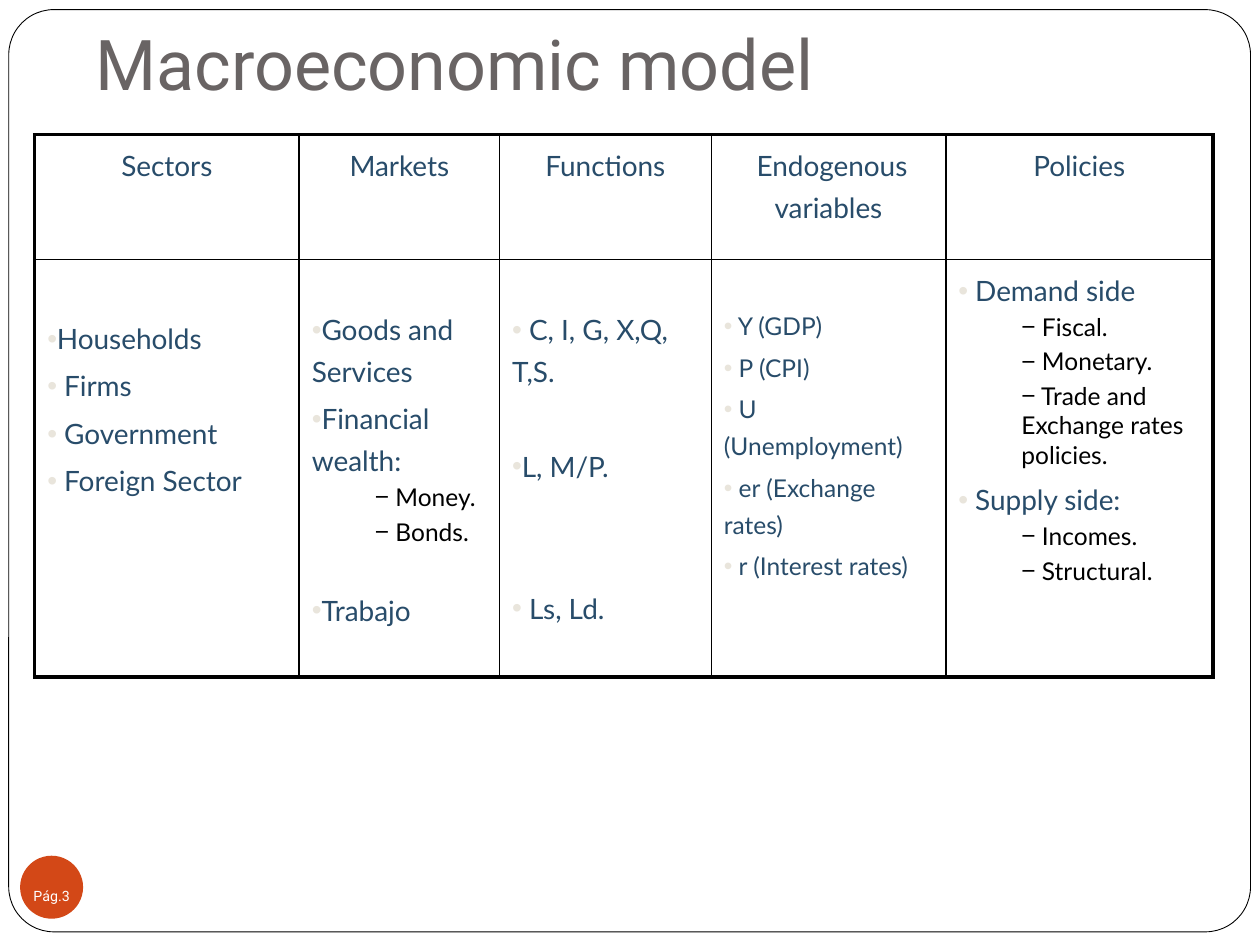
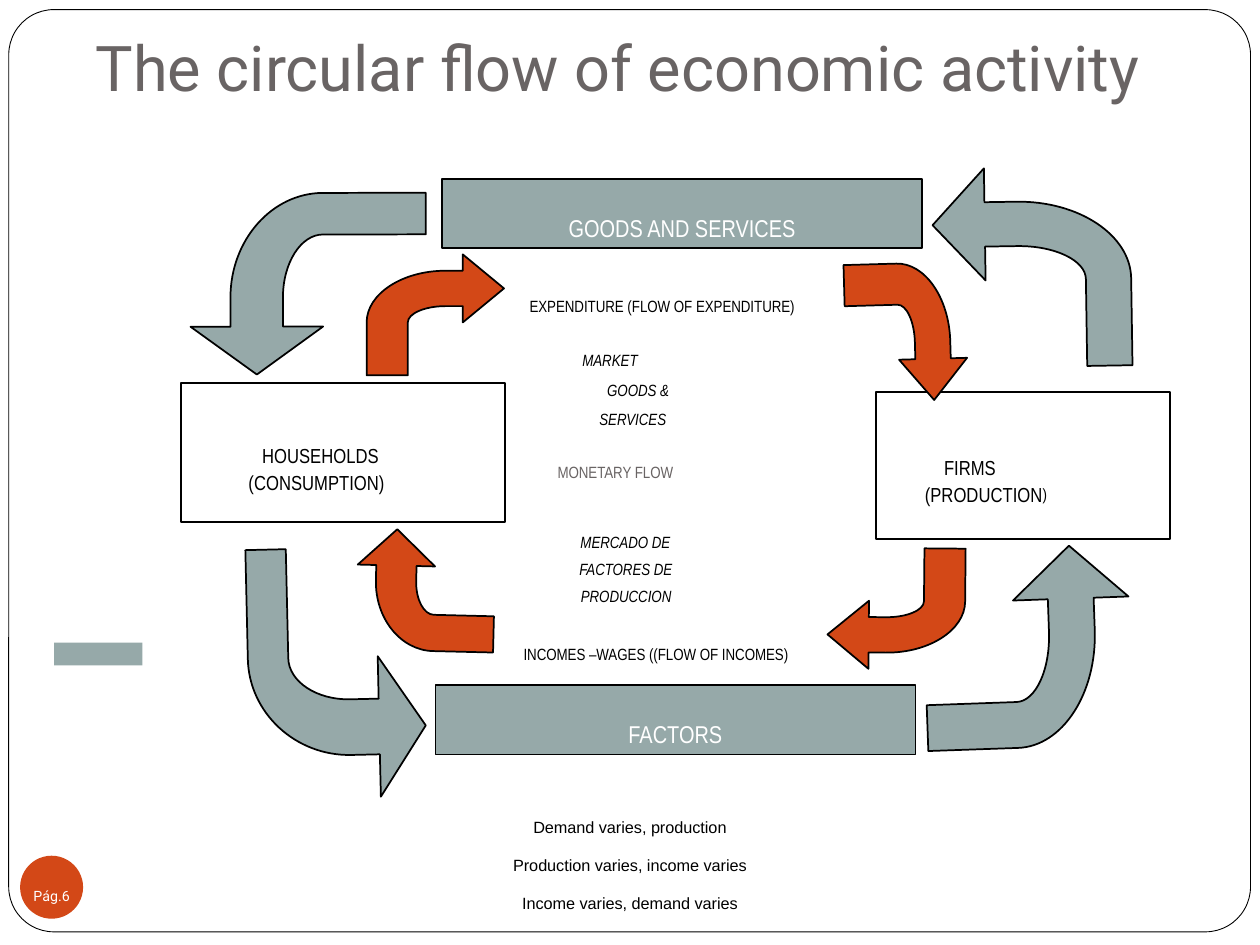
from lxml.etree import SubElement
from pptx import Presentation
from pptx.dml.color import RGBColor
from pptx.enum.shapes import MSO_SHAPE as Preset
from pptx.enum.text import MSO_ANCHOR as Anchor, MSO_AUTO_SIZE as AutoSize, PP_ALIGN as Align
from pptx.oxml.ns import qn
from pptx.util import Pt

BLACK, WHITE, GREY = "000000", "FFFFFF", "696464"
ORANGE, SAGE, NAVY, BULLET = "D34817", "96A9A9", "284C6A", "E9E5DC"
NARROW = "Arial Narrow"
# Bent arrow proportions: start of head, top of shaft, width of tail
MONEY_ARROW = (0.7, 0.135, 0.3)
REAL_ARROW = (0.736, 0.17, 0.229)
ROUNDNESS = 0.55

HEADERS = ["Sectors", "Markets", "Functions", " Endogenous variables", "Policies"]
COLUMN_WIDTHS = [151.2, 114.5, 121, 134, 152.6]
# Each column: top margin, size of main items, items as (level, text, extra space before)
COLUMNS = [
    (31, 16, [(0, "Households", 0), (0, " Firms", 0), (0, " Government", 0),
              (0, " Foreign Sector", 0)]),
    (26, 16, [(0, "Goods and Services", 0), (0, "Financial wealth:", 0),
              (1, " Money.", 0), (1, " Bonds.", 0), (0, "Trabajo", 19)]),
    (26, 16, [(0, " C, I, G, X,Q, T,S.", 0), (0, "L, M/P.", 27), (0, " Ls, Ld.", 54)]),
    (25.5, 14, [(0, " Y (GDP)", 0), (0, " P (CPI)", 0), (0, " U (Unemployment)", 0),
                (0, " er (Exchange rates)", 0), (0, " r (Interest rates)", 0)]),
    (3.6, 16, [(0, " Demand side", 0), (1, " Fiscal.", 0), (1, " Monetary.", 0),
               (1, " Trade and Exchange rates policies.", 0), (0, " Supply side:", 0),
               (1, " Incomes.", 0), (1, " Structural.", 0)]),
]

# Flow labels: text, left, top, width, size, colour, italic
LABELS = [
    ("EXPENDITURE (FLOW OF EXPENDITURE)", 302.6, 158.4, 176.4, 16, BLACK, False),
    ("MARKET", 332.8, 189.4, 36.7, 16, BLACK, True),
    ("GOODS &", 347, 206.6, 41, 16, BLACK, True),
    ("SERVICES", 342.5, 223.2, 44.6, 16, BLACK, True),
    ("MONETARY FLOW", 318.6, 253.4, 77, 16, GREY, False),
    ("MERCADO DE", 331.7, 293.4, 90, 16, BLACK, True),
    ("FACTORES DE", 331, 308.9, 94.3, 16, BLACK, True),
    ("PRODUCCION", 331.9, 324.4, 90, 16, BLACK, True),
    ("INCOMES –WAGES ((FLOW OF INCOMES)", 299.2, 357.5, 161.3, 16, BLACK, False),
    ("HOUSEHOLDS", 149.8, 239.8, 77, 20, BLACK, False),
    ("(CONSUMPTION)", 142, 255.4, 90, 20, BLACK, False),
    ("FIRMS", 539.5, 246.6, 33.8, 20, BLACK, False),
]

# Arrows: left, top, width, height, rotation
MONEY_FLOWS = [(209.5, 145.4, 78.5, 69.1, 0), (478.4, 155.2, 78.5, 69.1, 88.4),
               (473, 313.2, 78.5, 69.1, 180.5), (208.8, 298.1, 69.1, 78.5, 271.4)]
REAL_FLOWS = [(141.8, 313.2, 100.8, 142.6, 178.7), (529.9, 311.2, 114.5, 117.4, 88),
              (533.3, 95.8, 113, 113.8, 359.1), (124.3, 94.8, 103.7, 134.6, 269.9)]


def rgb(value):
    return RGBColor.from_string(value)


def style(para, size, font, colour, italic=False, lowered=False):
    para.font.size = Pt(size)
    para.font.name = font
    para.font.color.rgb = rgb(colour)
    para.font.italic = italic
    if lowered:
        for span in para.runs:
            span.font._element.set("baseline", "-25000")


def paint(shape, fill, line=None, weight=1):
    shape.shadow.inherit = False
    shape.fill.solid()
    shape.fill.fore_color.rgb = rgb(fill)
    if line:
        shape.line.color.rgb = rgb(line)
        shape.line.width = Pt(weight)
    else:
        shape.line.fill.background()


def set_margins(frame, left=0, top=0, right=0, bottom=0):
    frame.margin_left, frame.margin_top = Pt(left), Pt(top)
    frame.margin_right, frame.margin_bottom = Pt(right), Pt(bottom)


def add_shape(page, preset, left, top, width, height, fill, line=None, weight=1):
    shape = page.shapes.add_shape(preset, Pt(left), Pt(top), Pt(width), Pt(height))
    paint(shape, fill, line, weight)
    return shape


def write_centred(shape, text, size, font):
    frame = shape.text_frame
    frame.word_wrap = False
    frame.vertical_anchor = Anchor.MIDDLE
    para = frame.paragraphs[0]
    para.text = text
    para.alignment = Align.CENTER
    style(para, size, font, WHITE, lowered=True)


def add_label(page, text, left, top, width, size, colour, italic):
    box = page.shapes.add_textbox(Pt(left), Pt(top), Pt(width), Pt(size))
    frame = box.text_frame
    set_margins(frame)
    frame.word_wrap = False
    frame.auto_size = AutoSize.SHAPE_TO_FIT_TEXT
    para = frame.paragraphs[0]
    para.text = text
    style(para, size, NARROW, colour, italic, lowered=True)
    return para


def add_page(deck, title, title_size, number):
    """Page with the rounded frame, title and page marker that all pages share."""
    page = deck.slides.add_slide(deck.slide_layouts[5])
    frame = add_shape(page, Preset.ROUNDED_RECTANGLE, 5, 5.5, 709.6, 527, WHITE, BLACK, 0.5)
    frame.adjustments[0] = 0.049
    page.shapes._spTree.insert(2, frame._element)

    heading = page.shapes.title
    heading.left, heading.top = Pt(47.5), Pt(0)
    heading.width, heading.height = Pt(612), Pt(66.8)
    text = heading.text_frame
    text.text = title
    text.auto_size = AutoSize.NONE
    text.vertical_anchor = Anchor.BOTTOM
    set_margins(text, 7.2, 3.6, 7.2, 7.2)
    text.paragraphs[0].alignment = Align.LEFT
    style(text.paragraphs[0], title_size, "Roboto", GREY)

    marker = add_shape(page, Preset.OVAL, 11.5, 489, 36, 36, ORANGE)
    set_margins(marker.text_frame)
    write_centred(marker, f"Pág.{number}", 14, "Roboto")
    return page


# Table parts
def set_borders(cell, weights):
    """Draw left, right, top and bottom borders of the given weights."""
    properties = cell._tc.get_or_add_tcPr()
    for index, (side, weight) in enumerate(zip("LRTB", weights)):
        line = SubElement(properties, qn(f"a:ln{side}"), w=str(Pt(weight)))
        fill = SubElement(line, qn("a:solidFill"))
        SubElement(fill, qn("a:srgbClr"), val=BLACK)
        properties.insert(index, line)


def set_bullet(para, symbol, indent, colour):
    properties = para._p.get_or_add_pPr()
    properties.set("marL", str(Pt(indent)))
    properties.set("indent", "0")
    SubElement(SubElement(properties, qn("a:buClr")), qn("a:srgbClr"), val=colour)
    SubElement(properties, qn("a:buFont"), typeface="Arial")
    SubElement(properties, qn("a:buChar"), char=symbol)


def write_items(cell, top, main_size, items):
    cell.margin_top = Pt(top)
    frame = cell.text_frame
    for index, (level, text, extra) in enumerate(items):
        para = frame.add_paragraph() if index else frame.paragraphs[0]
        para.text = text
        size = 14 if level else main_size
        para.space_before = Pt(size / 5 + extra)
        if level:
            para.level = level
            set_bullet(para, "−", 36, BLACK)
        else:
            para.line_spacing = 1.25
            set_bullet(para, "•", 0, BULLET)
        style(para, size, "Lato", BLACK if level else NAVY)


def add_model_table(page):
    count = len(HEADERS)
    holder = page.shapes.add_table(2, count, Pt(19.8), Pt(77), Pt(673.3), Pt(310))
    table = holder.table
    table.first_row = table.horz_banding = False
    table.rows[0].height, table.rows[1].height = Pt(71.3), Pt(238.7)
    for column, width in enumerate(COLUMN_WIDTHS):
        table.columns[column].width = Pt(width)
        for row in range(2):
            cell = table.cell(row, column)
            cell.fill.background()
            outer = (column == 0, column == count - 1, row == 0, row == 1)
            set_borders(cell, [2.25 if edge else 1 for edge in outer])
        header = table.cell(0, column).text_frame.paragraphs[0]
        header.text = HEADERS[column]
        header.alignment = Align.CENTER
        header.line_spacing = 1.25
        header.space_before = Pt(3.2)
        style(header, 16, "Lato", NAVY)
        write_items(table.cell(1, column), *COLUMNS[column])


# Flow diagram parts
def round_corner(line, start, corner):
    """Turn a straight segment into a quarter ellipse that bends towards the corner."""
    end_point = line[0]
    end = (int(end_point.get("x")), int(end_point.get("y")))
    curve = line.getparent().makeelement(qn("a:cubicBezTo"))
    for point in (start, end):
        x, y = [round(p + ROUNDNESS * (c - p)) for p, c in zip(point, corner)]
        SubElement(curve, qn("a:pt"), x=str(x), y=str(y))
    curve.append(end_point)
    line.getparent().replace(line, curve)


def add_bent_arrow(page, left, top, width, height, rotation, form, fill, mirrored=False):
    head, shaft, tail = form
    bend, neck = 0.575, 0.563

    def place(x, y):
        return Pt(width * (1 - x if mirrored else x)), Pt(height * y)

    outline = [(1, neck / 2), (head, 0), (head, shaft), (bend, shaft), (0, neck), (0, 1),
               (tail, 1), (tail, neck), (bend, neck - shaft), (head, neck - shaft),
               (head, neck)]
    points = [place(x, y) for x, y in outline]
    builder = page.shapes.build_freeform(*points[0])
    builder.add_line_segments(points[1:], close=True)
    arrow = builder.convert_to_shape(Pt(left), Pt(top))
    lines = list(arrow._element.iter(qn("a:lnTo")))
    round_corner(lines[3], points[3], place(0, shaft))
    round_corner(lines[7], points[7], place(tail, neck - shaft))
    paint(arrow, fill, BLACK)
    arrow.rotation = rotation


def add_conclusions(page, lines):
    box = page.shapes.add_textbox(Pt(0), Pt(465.8), Pt(720), Pt(46))
    frame = box.text_frame
    frame.word_wrap = True
    frame.vertical_anchor = Anchor.MIDDLE
    for index, line in enumerate(lines):
        para = frame.add_paragraph() if index else frame.paragraphs[0]
        para.text = line
        para.alignment = Align.CENTER
        style(para, 16, "Arial", BLACK, lowered=True)


def add_circular_flow(page):
    # Households and firms
    add_shape(page, Preset.RECTANGLE, 103.4, 219, 185, 79.2, WHITE, BLACK, 1.25)
    add_shape(page, Preset.RECTANGLE, 500.4, 224, 168.2, 84, WHITE, BLACK, 1.25)
    for label in LABELS:
        add_label(page, *label)
    production = add_label(page, "(PRODUCTION", 528.5, 262, 80.6, 20, BLACK, False)
    bracket = production.add_run()
    bracket.text = ")"
    bracket.font.size = Pt(16)
    bracket.font._element.set("baseline", "-25000")

    # Key to the real flow
    add_shape(page, Preset.RECTANGLE, 31, 367.2, 50.4, 13, SAGE)

    # Flows and the two markets
    for spot in MONEY_FLOWS:
        add_bent_arrow(page, *spot, MONEY_ARROW, ORANGE)
    for spot in REAL_FLOWS:
        add_bent_arrow(page, *spot, REAL_ARROW, SAGE, mirrored=True)
    for text, left, top in [("FACTORS", 248.8, 391.6), ("GOODS AND SERVICES", 252.7, 102.2)]:
        band = add_shape(page, Preset.RECTANGLE, left, top, 274.3, 39.6, SAGE, BLACK)
        write_centred(band, text, 24, NARROW)


def main():
    deck = Presentation()
    deck.slide_width, deck.slide_height = Pt(720), Pt(540)

    model = add_page(deck, "Macroeconomic model", 40, 3)
    add_model_table(model)

    flow = add_page(deck, "The circular flow of economic activity", 36, 6)
    add_circular_flow(flow)
    add_conclusions(flow, ["Demand varies, production", "Production varies, income varies",
                           "Income varies, demand varies"])
    deck.save("out.pptx")


if __name__ == "__main__":
    main()
